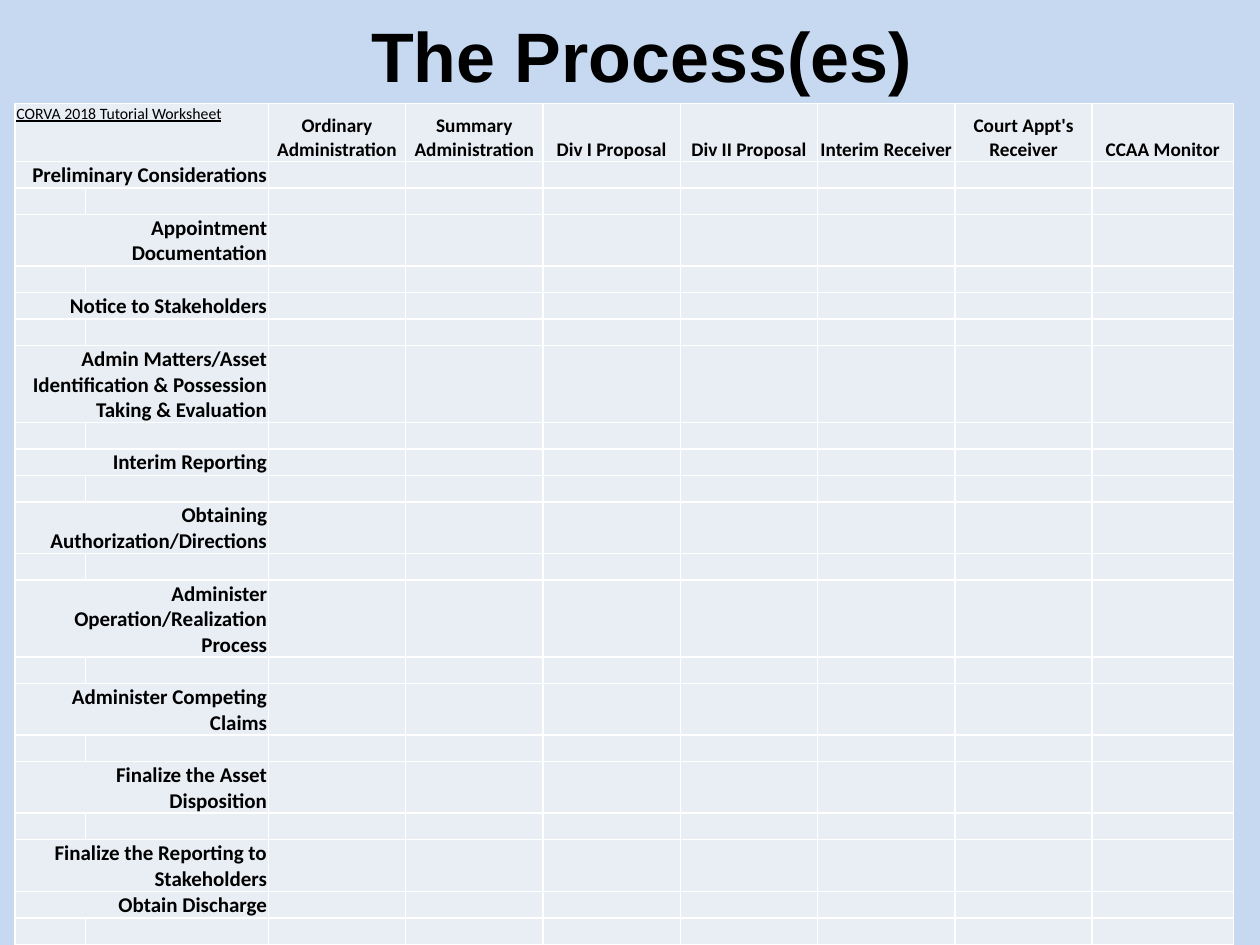
from pptx import Presentation
from pptx.dml.color import RGBColor
from pptx.enum.text import MSO_ANCHOR, PP_ALIGN
from pptx.oxml.ns import qn
from pptx.util import Inches, Pt
from lxml.etree import SubElement

TITLE = "The Process(es)"
WORKSHEET = "CORVA 2018 Tutorial Worksheet"
PROCESSES = ["Ordinary Administration", "Summary Administration", "Div I Proposal",
             "Div II Proposal", "Interim Receiver", "Court Appt's Receiver",
             "CCAA Monitor"]
# (stage, lines it takes)
STAGES = [
    ("Preliminary Considerations", 1),
    ("Appointment Documentation", 2),
    ("Notice to Stakeholders", 1),
    ("Admin Matters/Asset Identification & Possession Taking & Evaluation", 3),
    ("Interim Reporting", 1),
    ("Obtaining Authorization/Directions", 2),
    ("Administer Operation/Realization Process", 3),
    ("Administer Competing Claims", 2),
    ("Finalize the Asset Disposition", 2),
    ("Finalize the Reporting to Stakeholders", 2),
    ("Obtain Discharge", 1),
]
NO_GAP_AFTER = "Finalize the Reporting to Stakeholders"

THEME = {
    "background": "C6D9F1", "cell": "E9EDF4", "border": "FFFFFF", "text": "000000",
    "title_font": "Arial", "table_font": "Calibri",
    "title": 40, "worksheet": 9, "process": 11, "stage": 12, "border_width": 1,
}
TITLE_BOX = (0.59, 0.13, 9, 0.61)
TABLE_LEFT, TABLE_TOP = 0.12, 0.82
COLS = [0.56, 1.45] + [1.09] * (len(PROCESSES) - 1) + [1.12]
HEADER_HEIGHT, LINE_ROW, EXTRA_LINE = 0.46, 0.21, 0.19


def rgb(name):
    return RGBColor.from_string(THEME[name])


def add_text(tf, text, size, font, align, bold=False, underline=False):
    p = tf.paragraphs[0]
    p.alignment = align
    r = p.add_run()
    r.text = text
    r.font.name, r.font.size = THEME[font], Pt(THEME[size])
    r.font.bold, r.font.underline = bold, underline
    r.font.color.rgb = rgb("text")


def style_cell(cell):
    """Set insets, white borders, fill and the type size of an empty cell."""
    cell.margin_left = cell.margin_right = cell.margin_top = Inches(0.01)
    cell.margin_bottom = 0
    cell.vertical_anchor = MSO_ANCHOR.BOTTOM
    tc_pr = cell._tc.get_or_add_tcPr()
    for side in ("a:lnL", "a:lnR", "a:lnT", "a:lnB"):
        ln = SubElement(tc_pr, qn(side), w=str(Pt(THEME["border_width"])))
        fill = SubElement(ln, qn("a:solidFill"))
        SubElement(fill, qn("a:srgbClr"), val=THEME["border"])
    cell.fill.solid()
    cell.fill.fore_color.rgb = rgb("cell")
    p = cell.text_frame.paragraphs[0]
    SubElement(p._p, qn("a:endParaRPr"), sz=str(THEME["stage"] * 100))


def add_title(s):
    tf = s.shapes.add_textbox(*map(Inches, TITLE_BOX)).text_frame
    tf.word_wrap = True
    tf.vertical_anchor = MSO_ANCHOR.MIDDLE
    add_text(tf, TITLE, "title", "title_font", PP_ALIGN.CENTER, bold=True)


def add_worksheet(s):
    rows = []
    for stage, lines in STAGES:
        rows.append((stage, LINE_ROW + EXTRA_LINE * (lines - 1)))
        if stage != NO_GAP_AFTER:
            rows.append((None, LINE_ROW))
    heights = [HEADER_HEIGHT] + [height for _, height in rows]
    table = s.shapes.add_table(
        len(heights), len(COLS), Inches(TABLE_LEFT), Inches(TABLE_TOP),
        Inches(sum(COLS)), Inches(sum(heights))).table
    table.first_row = table.horz_banding = False
    for col, width in zip(table.columns, COLS):
        col.width = Inches(width)
    for row, height in zip(table.rows, heights):
        row.height = Inches(height)
        for cell in row.cells:
            style_cell(cell)

    corner = table.cell(0, 0)
    corner.merge(table.cell(0, 1))
    corner.vertical_anchor = MSO_ANCHOR.TOP
    add_text(corner.text_frame, WORKSHEET, "worksheet", "table_font",
             PP_ALIGN.LEFT, underline=True)
    for c, process in enumerate(PROCESSES, 2):
        add_text(table.cell(0, c).text_frame, process, "process", "table_font",
                 PP_ALIGN.CENTER, bold=True)
    for i, (stage, _) in enumerate(rows, 1):
        if stage:
            cell = table.cell(i, 0)
            cell.merge(table.cell(i, 1))
            add_text(cell.text_frame, stage, "stage", "table_font",
                     PP_ALIGN.RIGHT, bold=True)


def main():
    prs = Presentation()
    prs.slide_width, prs.slide_height = Inches(10), Inches(7.5)
    s = prs.slides.add_slide(prs.slide_layouts[6])
    s.background.fill.solid()
    s.background.fill.fore_color.rgb = rgb("background")
    add_title(s)
    add_worksheet(s)
    prs.save("out.pptx")


if __name__ == "__main__":
    main()
